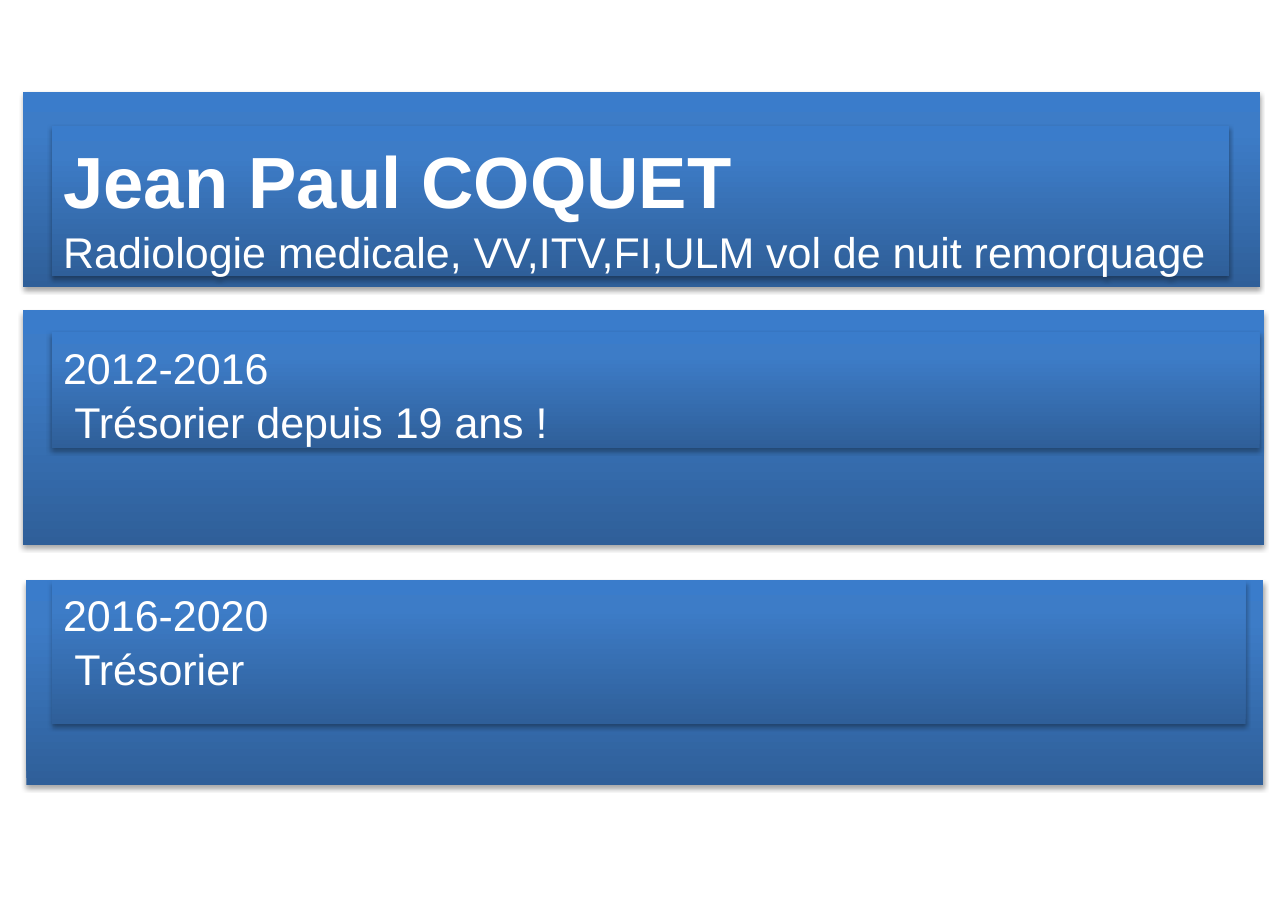
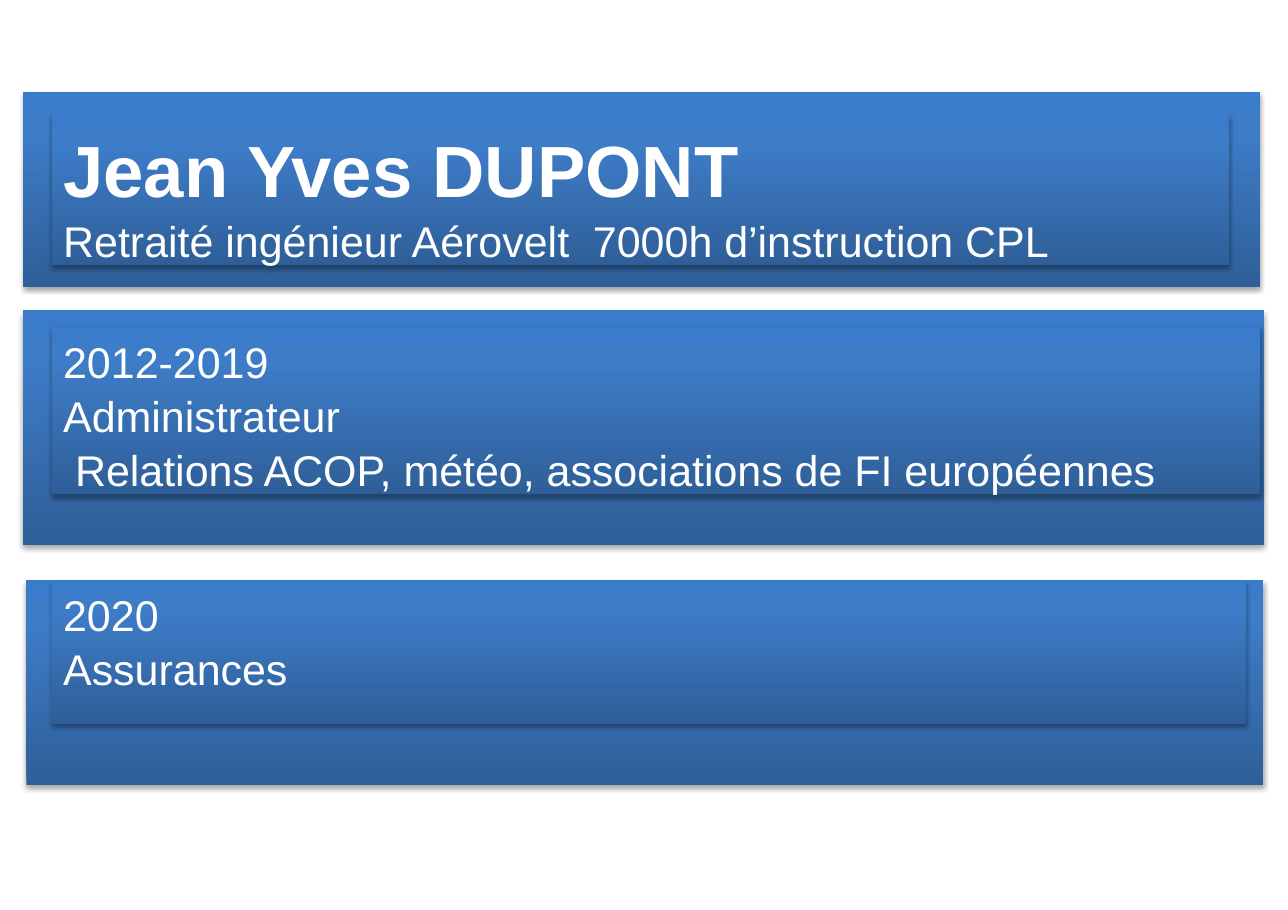
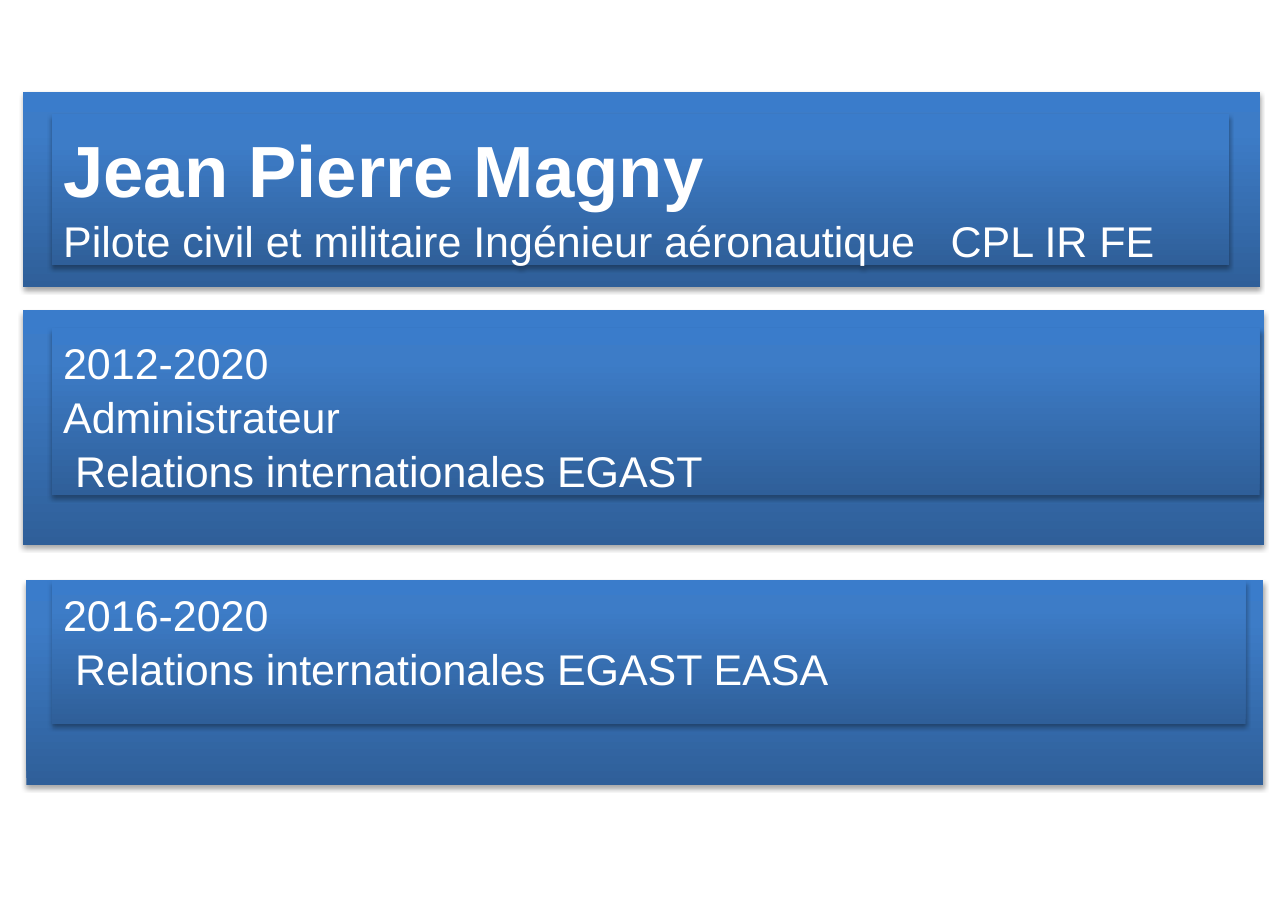
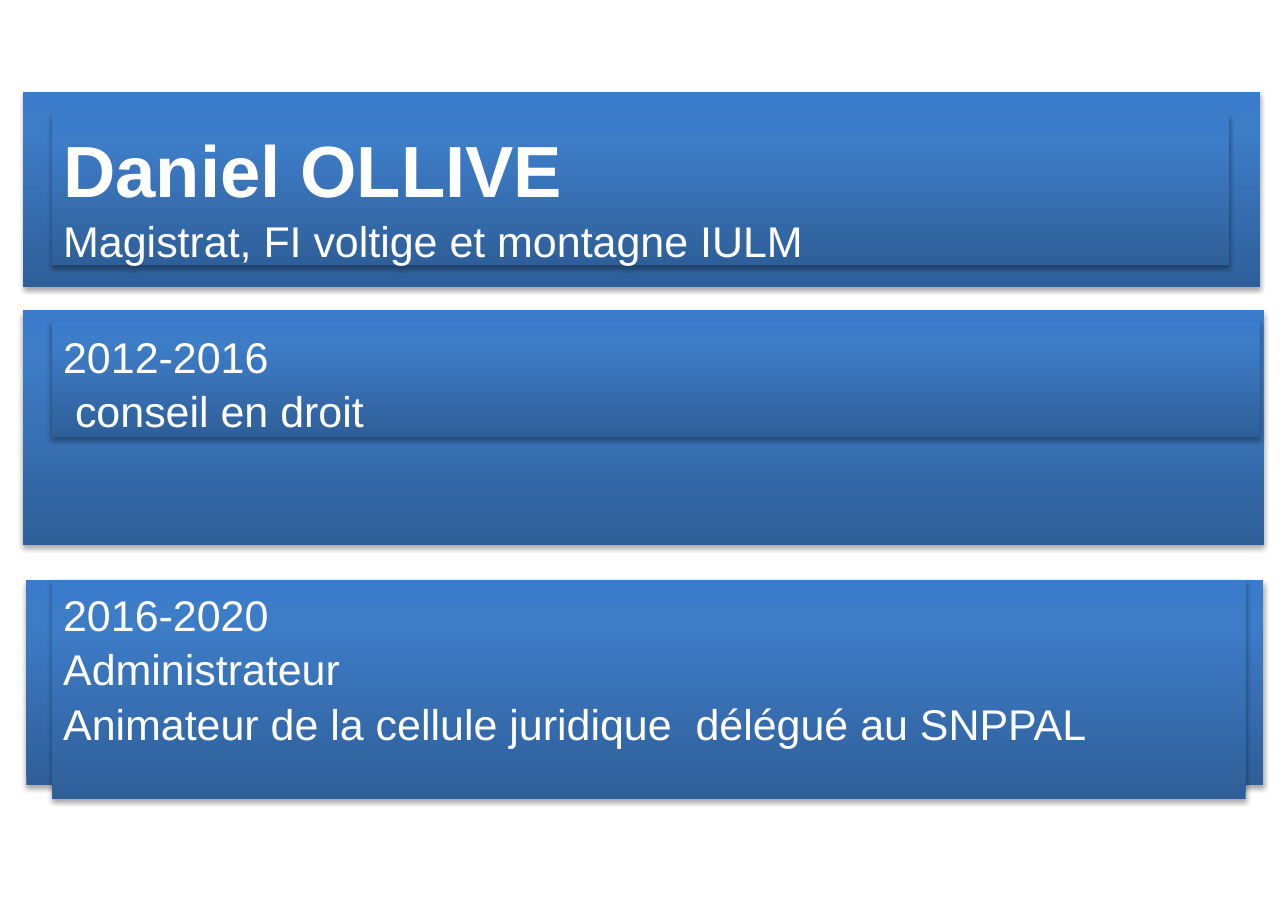
from copy import deepcopy

from lxml import etree
from pptx import Presentation
from pptx.dml.color import RGBColor
from pptx.enum import shapes, text
from pptx.oxml import ns
from pptx.util import Pt

WHITE = RGBColor(0xFF, 0xFF, 0xFF)
GRADIENT = (
    (0, RGBColor(0x2F, 0x5F, 0x99)),
    (0.8, RGBColor(0x3D, 0x7C, 0xC7)),
    (1, RGBColor(0x3A, 0x7C, 0xCB)),
)
FONT = "Arial"
NAME_SIZE, BODY_SIZE = 47.4, 28.1
LINE_SPACING = 1.05
INSET_X, INSET_Y = 7.5, 4

# Left, top, width, height in points
NAME_BAND = (15.1, 60.5, 808.6, 127.4)
FIRST_TERM_BAND = (15.1, 203, 811.4, 153.4)
SECOND_TERM_BAND = (17.3, 379.4, 808.6, 133.9)
PANEL_LEFT = 33.8
NAME_WIDTH, FIRST_TERM_WIDTH, SECOND_TERM_WIDTH = 769.7, 789.8, 780.5
NAME_HEIGHT = 98.6

# Each panel is given as (offset below the top of its band, height, lines)
PROFILES = [
    {
        "name": "Jean Paul COQUET",
        "background": "Radiologie medicale, VV,ITV,FI,ULM vol de nuit remorquage",
        "name_offset": 21.6,
        "first_term": (14.4, 75.6, ["2012-2016", " Trésorier depuis 19 ans !"]),
        "second_term": (0, 94.3, ["2016-2020", " Trésorier"]),
    },
    {
        "name": "Jean Yves DUPONT",
        "background": "Retraité ingénieur Aérovelt  7000h d’instruction CPL",
        "name_offset": 14.4,
        "first_term": (10.8, 109.4, [
            "2012-2019", "Administrateur",
            " Relations ACOP, météo, associations de FI européennes"]),
        "second_term": (0, 94.3, ["2020", "Assurances"]),
    },
    {
        "name": "Jean Pierre Magny",
        "background": "Pilote civil et militaire Ingénieur aéronautique   CPL IR FE",
        "name_offset": 14.4,
        "first_term": (11.5, 109.4, [
            "2012-2020", "Administrateur", " Relations internationales EGAST"]),
        "second_term": (0, 94.3, [
            "2016-2020", " Relations internationales EGAST EASA"]),
    },
    {
        "name": "Daniel OLLIVE",
        "background": "Magistrat, FI voltige et montagne IULM",
        "name_offset": 14.4,
        "first_term": (7.2, 75.6, ["2012-2016", " conseil en droit"]),
        "second_term": (0, 143.3, [
            "2016-2020", "Administrateur",
            "Animateur de la cellule juridique  délégué au SNPPAL"]),
    },
]


def fill_gradient(shape):
    """Blue gradient running upwards from the dark first stop."""
    shape.fill.gradient()
    shape.fill.gradient_angle = 90
    stop_list = shape._element.spPr.find(".//" + ns.qn("a:gsLst"))
    stop_list.append(deepcopy(stop_list[-1]))
    for stop, (position, color) in zip(shape.fill.gradient_stops, GRADIENT):
        stop.position = position
        stop.color.rgb = color


def add_shadow(shape):
    shape.shadow.inherit = False
    effects = shape._element.spPr.find(ns.qn("a:effectLst"))
    shadow = etree.SubElement(
        effects, ns.qn("a:outerShdw"), blurRad=str(Pt(3.1)),
        dist=str(Pt(1.8)), dir="5400000", rotWithShape="0")
    black = etree.SubElement(shadow, ns.qn("a:srgbClr"), val="000000")
    etree.SubElement(black, ns.qn("a:alpha"), val="35000")


def add_block(slide, box):
    block = slide.shapes.add_shape(
        shapes.MSO_SHAPE.RECTANGLE, *(Pt(length) for length in box))
    fill_gradient(block)
    block.line.fill.background()
    add_shadow(block)
    return block


def add_panel(slide, box, lines):
    """Block with text; each line is (wording, size, bold)."""
    frame = add_block(slide, box).text_frame
    frame.word_wrap = True
    frame.auto_size = text.MSO_AUTO_SIZE.NONE
    frame.vertical_anchor = text.MSO_ANCHOR.TOP
    frame.margin_left = frame.margin_right = Pt(INSET_X)
    frame.margin_top = frame.margin_bottom = Pt(INSET_Y)
    for index, (wording, size, bold) in enumerate(lines):
        paragraph = frame.add_paragraph() if index else frame.paragraphs[0]
        paragraph.alignment = text.PP_ALIGN.LEFT
        paragraph.line_spacing = LINE_SPACING
        run = paragraph.add_run()
        run.text = wording
        run.font.name = FONT
        run.font.size = Pt(size)
        run.font.bold = bold
        run.font.color.rgb = WHITE


def add_name_panel(slide, band, profile):
    box = (PANEL_LEFT, band[1] + profile["name_offset"], NAME_WIDTH, NAME_HEIGHT)
    add_panel(slide, box, [
        (profile["name"], NAME_SIZE, True),
        (profile["background"], BODY_SIZE, False)])


def add_term_panel(slide, band, width, term):
    offset, height, lines = term
    add_panel(slide, (PANEL_LEFT, band[1] + offset, width, height),
              [(line, BODY_SIZE, False) for line in lines])


def add_profile_slide(presentation, profile):
    slide = presentation.slides.add_slide(presentation.slide_layouts[6])
    for band in (NAME_BAND, FIRST_TERM_BAND, SECOND_TERM_BAND):
        add_block(slide, band)
    add_name_panel(slide, NAME_BAND, profile)
    add_term_panel(slide, FIRST_TERM_BAND, FIRST_TERM_WIDTH, profile["first_term"])
    add_term_panel(slide, SECOND_TERM_BAND, SECOND_TERM_WIDTH, profile["second_term"])


def main():
    presentation = Presentation()
    presentation.slide_width = Pt(842)
    presentation.slide_height = Pt(595)
    for profile in PROFILES:
        add_profile_slide(presentation, profile)
    presentation.save("out.pptx")


if __name__ == "__main__":
    main()
